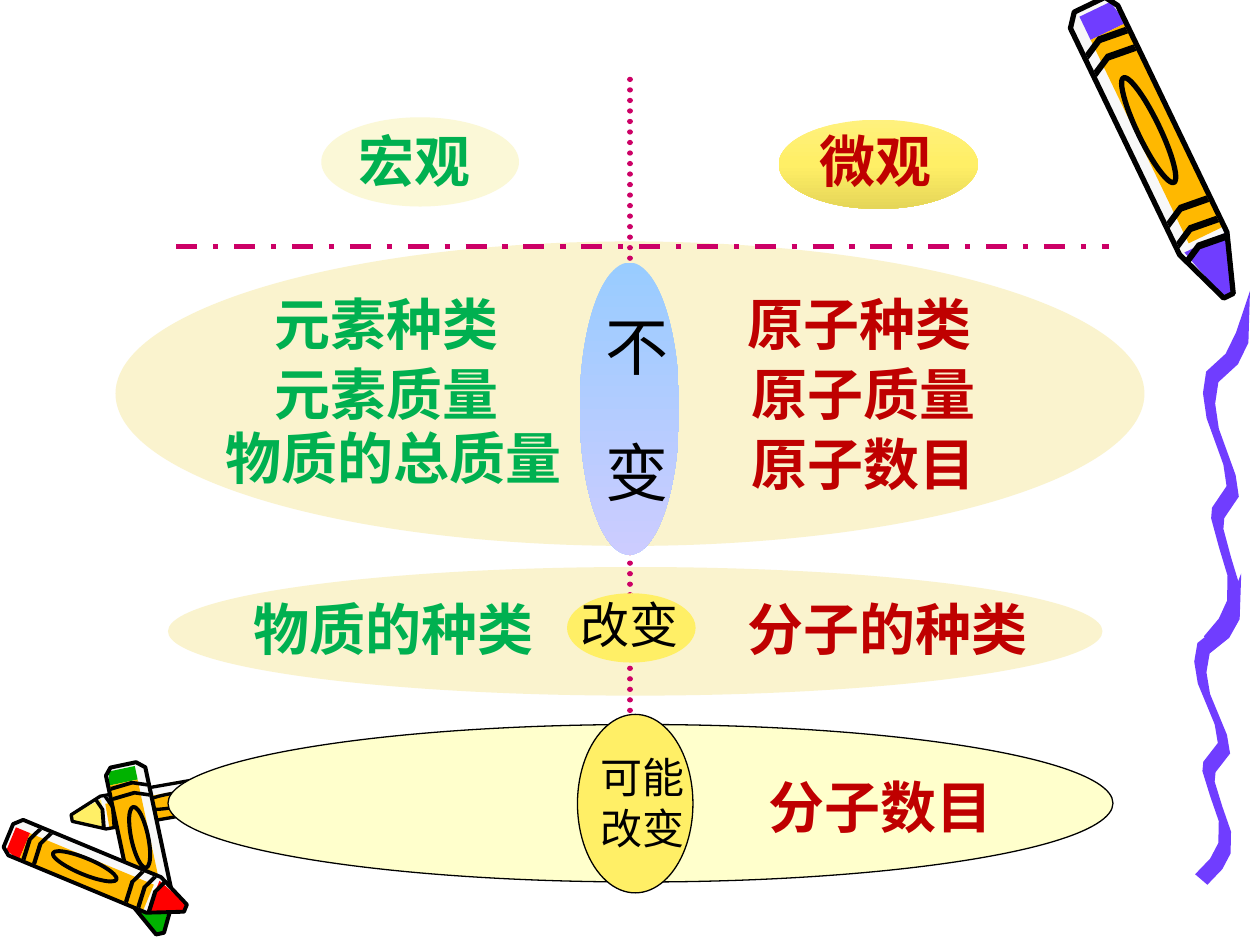
"""Build a slide on what stays the same and what changes in a chemical reaction."""
import math
from copy import deepcopy

from pptx import Presentation
from pptx import util as u
from pptx.dml.color import RGBColor
from pptx.enum import dml, shapes, text
from pptx.oxml import parse_xml
from pptx.oxml.ns import nsdecls, qn

COLORS = {
    "black": "000000", "white": "F8F8F8", "violet": "703DFF", "orange": "FFB800",
    "yellow": "FFEF66", "red": "FF0000", "leaf": "00B200", "pink": "CC0066",
    "green": "00B050", "crimson": "BF0000", "cream": "FAF3CE", "pale": "FBF8D7",
    "ivory": "FFFFCC", "light": "FFF17D", "dark": "E5D658", "sky": "99CCFF",
    "lilac": "CCCCFF",
}

ROW_TOPS = {"heading": 69, "kind": 162, "mass": 202, "total": 238.3, "number": 242,
            "substance": 336, "molecules": 438}
COLUMNS = {
    "green": [
        ("宏观", 198, "heading"), ("元素种类", 150, "kind"), ("元素质量", 150, "mass"),
        ("物质的总质量", 121.7, "total"), ("物质的种类", 138, "substance"),
    ],
    "crimson": [
        ("微观", 461.5, "heading"), ("原子种类", 420, "kind"), ("原子质量", 422.6, "mass"),
        ("原子数目", 422.6, "number"), ("分子的种类", 420, "substance"),
        ("分子数目", 432, "molecules"),
    ],
}
VERDICTS = [
    ("不　变", (329.8, 172.8, 58.3, 132.5), 36, "Arial", True),
    ("改变", (324.7, 336, 73.5, 41), 28, "Arial", False),
    ("可能\n改变", (336, 426, 66.3, 65.5), 24, "Times New Roman", False),
]
BANDS = {
    "changed": ((96, 324, 534, 73.5), ["cream"], False),
    "unchanged": ((66, 138, 588, 174), ["cream"], False),
}
DIVIDERS = [
    ((100.8, 141, 633.6, 141), dml.MSO_LINE.DASH_DOT),
    ((360, 430, 360, 41.8), dml.MSO_LINE.ROUND_DOT),
]
BADGES = {
    "macro heading": ((183.6, 67, 113, 51), ["pale"], False),
    "micro heading": ((445, 68.4, 113.8, 51), ["light", "yellow", "dark"], False),
    "unchanged": ((331.2, 150, 57, 167), ["sky", "lilac"], False),
    "changed": ((324, 339, 73.5, 39.6), ["yellow"], False),
    "possible band": ((96, 414, 540, 90), ["ivory"], True),
    "possible": ((330, 408.25, 66, 102), ["yellow"], True),
}

# fmt: off
CRAYONS = [
    {"tail": (622, 3), "tip": (702, 169), "width": 30, "accent": "violet"},
    {"tail": (141, 450), "tip": (41, 467.5), "width": 19, "accent": "yellow"},
    {"tail": (71, 437), "tip": (91.5, 533.5), "width": -23, "accent": "leaf"},
    {"tail": (5, 477), "tip": (106, 519), "width": -22, "accent": "red"},
]
# fmt: on
CRAYON_SHELL = [(0.04, -0.5), (0, -0.3), (0, 0.35), (0.04, 0.5), (0.82, 0.5),
                (1, 0.1), (1, -0.1), (0.82, -0.5)]
CRAYON_FILLS = {
    "tail": [(0.02, -0.25), (0.02, 0.4), (0.1, 0.5), (0.1, -0.25)],
    "wrapper": [(0.1, -0.25), (0.1, 0.5), (0.8, 0.5), (0.8, -0.25)],
    "point": [(0.82, -0.4), (0.82, 0.5), (1, 0.1), (1, -0.1)],
}
CRAYON_STRIPES = [0.11, 0.17, 0.69, 0.76, 0.82]
STRIPE_THICKNESS = 0.022
EDGE_RATIO = 0.1
OVAL = {"center": 0.43, "length": 0.36, "width": 0.42}

SQUIGGLES = [(683.3, 327.6, 26, 178.6), (688.3, 166.3, 26, 204.5)]
WAVE = [(1, 0), (0.83, 0.13), (0.6, 0.19), (0.17, 0.24), (0.1, 0.3), (0.18, 0.37),
        (0.55, 0.5), (0.62, 0.56), (0.3, 0.62), (0.28, 0.65), (0.45, 0.73),
        (0.64, 0.81), (0.63, 0.88), (0.45, 0.93), (0.12, 0.98)]
HALF_RIBBON = (3.5, 3)


def rgb(name):
    return RGBColor.from_string(COLORS[name])


def paint(shape, fill=None, line=None, width=0.75):
    shape.shadow.inherit = False
    if fill:
        shape.fill.solid()
        shape.fill.fore_color.rgb = rgb(fill)
    else:
        shape.fill.background()
    if line:
        shape.line.color.rgb = rgb(line)
        shape.line.width = u.Pt(width)
    else:
        shape.line.fill.background()


def add_polygon(slide, points, **style):
    corners = [(u.Pt(x), u.Pt(y)) for x, y in points]
    builder = slide.shapes.build_freeform(*corners[0], scale=1)
    builder.add_line_segments(corners[1:], close=True)
    paint(builder.convert_to_shape(), **style)


def add_crayon(slide, tail, tip, width, accent):
    run, rise = tip[0] - tail[0], tip[1] - tail[1]
    length = math.hypot(run, rise)
    edge = abs(width) * EDGE_RATIO

    def place(along, across):
        offset = across * width / length
        return tail[0] + along * run + offset * rise, tail[1] + along * rise - offset * run

    def outline(points):
        return [place(*point) for point in points]

    add_polygon(slide, outline(CRAYON_SHELL), fill="white")
    for part, points in CRAYON_FILLS.items():
        add_polygon(slide, outline(points), fill="orange" if part == "wrapper" else accent)
    for start in CRAYON_STRIPES:
        front = [(start + 0.02, -0.45), (start - 0.01, -0.1), (start, 0.45)]
        back = [(along + STRIPE_THICKNESS, across) for along, across in reversed(front)]
        add_polygon(slide, outline(front + back), fill="black")
    center_x, center_y = place(OVAL["center"], 0)
    oval_length, oval_width = length * OVAL["length"], abs(width) * OVAL["width"]
    box = (center_x - oval_length / 2, center_y - oval_width / 2, oval_length, oval_width)
    oval = slide.shapes.add_shape(shapes.MSO_SHAPE.OVAL, *map(u.Pt, box))
    oval.rotation = math.degrees(math.atan2(rise, run))
    paint(oval, line="black", width=edge)
    add_polygon(slide, outline(CRAYON_SHELL), line="black", width=edge)


def add_squiggle(slide, left, top, width, height):
    spine = [(left + x * width, top + y * height) for x, y in WAVE]
    shift_x, shift_y = HALF_RIBBON
    near = [(x - shift_x, y - shift_y) for x, y in spine[1:]]
    far = [(x + shift_x, y + shift_y) for x, y in spine[1:]]
    add_polygon(slide, spine[:1] + near + far[::-1], fill="violet")


def add_ellipse(slide, box, colors, outlined):
    shape = slide.shapes.add_shape(shapes.MSO_SHAPE.OVAL, *map(u.Pt, box))
    paint(shape, fill=colors[0], line="black" if outlined else None)
    if len(colors) > 1:
        shape.fill.gradient()
        shape.fill.gradient_angle = 270
        stop_list = next(shape._element.spPr.iter(qn("a:gsLst")))
        for _ in colors[2:]:
            stop_list.append(deepcopy(stop_list[-1]))
        for index, (stop, color) in enumerate(zip(shape.fill.gradient_stops, colors)):
            stop.position = index / (len(colors) - 1)
            stop.color.rgb = rgb(color)


def add_divider(slide, ends, dash):
    connector = slide.shapes.add_connector(shapes.MSO_CONNECTOR.STRAIGHT, *map(u.Pt, ends))
    connector.line.color.rgb = rgb("pink")
    connector.line.width = u.Pt(3)
    connector.line.dash_style = dash
    properties = connector._element.spPr
    if dash == dml.MSO_LINE.ROUND_DOT:
        properties.find(qn("a:ln")).set("cap", "rnd")
    properties.append(parse_xml(f"<a:effectLst {nsdecls('a')}/>"))


def add_text(slide, content, box, size=32, font="Comic Neue", color="black", bold=False, vertical=False):
    frame = slide.shapes.add_textbox(*map(u.Pt, box)).text_frame
    frame.word_wrap = True
    if vertical:
        frame.auto_size = text.MSO_AUTO_SIZE.SHAPE_TO_FIT_TEXT
        frame._txBody.bodyPr.set("vert", "eaVert")
    frame.text = content
    for paragraph in frame.paragraphs:
        run_font = paragraph.runs[0].font
        run_font.size, run_font.name, run_font.bold = u.Pt(size), font, bold
        run_font.color.rgb = rgb(color)


def main():
    presentation = Presentation()
    presentation.slide_width, presentation.slide_height = u.Pt(720), u.Pt(540)
    slide = presentation.slides.add_slide(presentation.slide_layouts[6])
    for crayon in CRAYONS:
        add_crayon(slide, **crayon)
    for squiggle in SQUIGGLES:
        add_squiggle(slide, *squiggle)
    for band in BANDS.values():
        add_ellipse(slide, *band)
    for divider in DIVIDERS:
        add_divider(slide, *divider)
    for badge in BADGES.values():
        add_ellipse(slide, *badge)
    for color, labels in COLUMNS.items():
        for label, left, row in labels:
            box = (left, ROW_TOPS[row], 32 * len(label) + 17, 46)
            add_text(slide, label, box, color=color, bold=True)
    for verdict, box, size, font, vertical in VERDICTS:
        add_text(slide, verdict, box, size=size, font=font, vertical=vertical)
    presentation.save("out.pptx")


if __name__ == "__main__":
    main()
